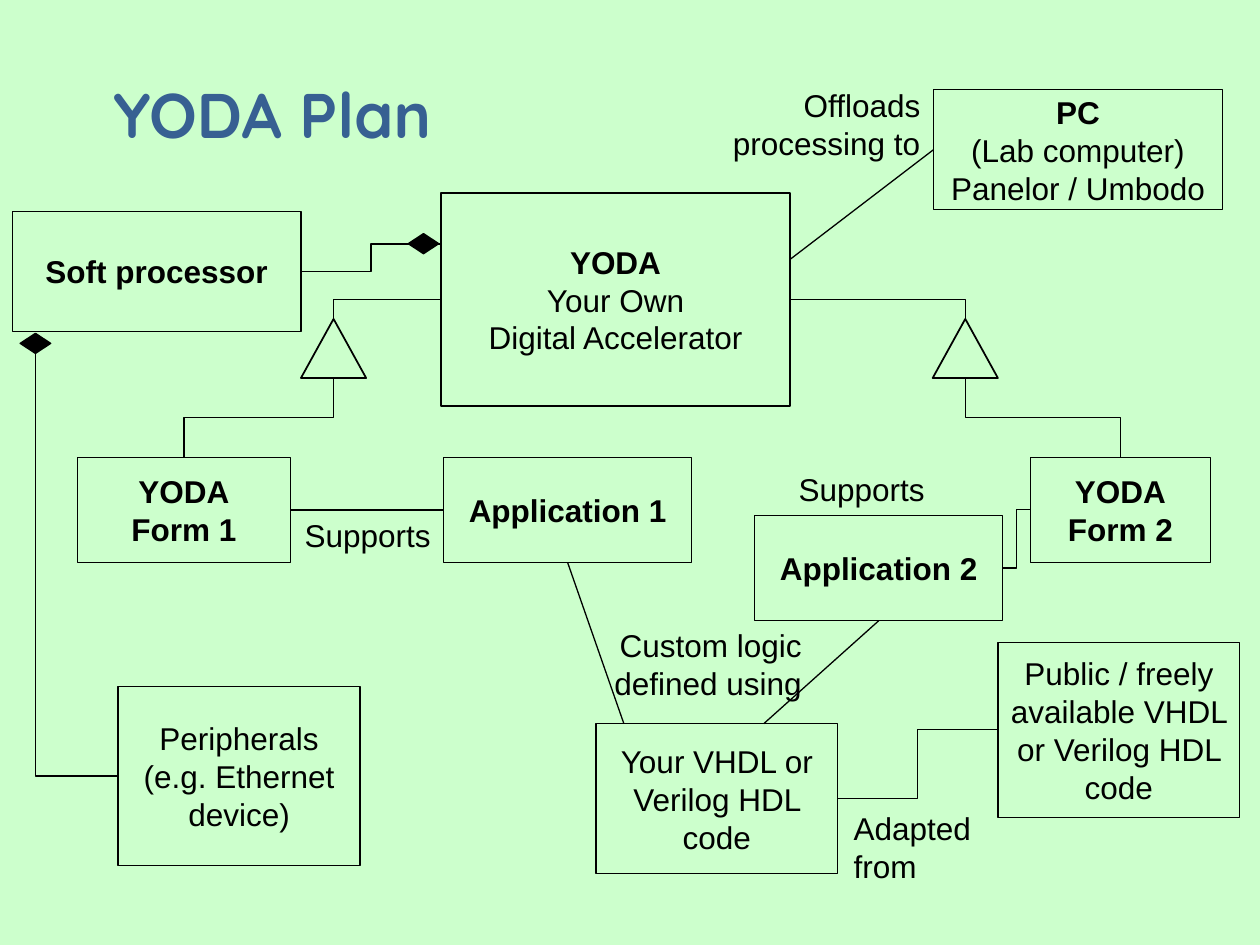
from lxml import etree
from pptx import Presentation
from pptx import util as u
from pptx.dml.color import RGBColor
from pptx.enum import shapes, text
from pptx.oxml.ns import qn

BACKGROUND = RGBColor(0xCC, 0xFF, 0xCC)
TITLE_BLUE = RGBColor(0x37, 0x60, 0x92)
BLACK = RGBColor(0, 0, 0)

SHAPE = shapes.MSO_SHAPE
ALIGN = text.PP_ALIGN
TOP, LEFT, BOTTOM, RIGHT = range(4)
BOX_LINE = 0.75


def points(*lengths):
    return [u.Pt(length) for length in lengths]


def write(shape, lines, align, bold_lines=0):
    """Set the lines as paragraphs, the first bold_lines of them in bold."""
    frame = shape.text_frame
    frame.text = "\n".join(lines)
    for index, paragraph in enumerate(frame.paragraphs):
        paragraph.alignment = align
        font = paragraph.runs[0].font
        font.name, font.size = "Arial", u.Pt(18)
        font.bold = index < bold_lines
        font.color.rgb = BLACK


def add_outline(slide, kind, left, top, width, height, line=BOX_LINE, fill=None):
    shape = slide.shapes.add_shape(kind, *points(left, top, width, height))
    shape.shadow.inherit = False
    if fill is None:
        shape.fill.background()
    else:
        shape.fill.solid()
        shape.fill.fore_color.rgb = fill
    shape.line.color.rgb = BLACK
    shape.line.width = u.Pt(line)
    return shape


def add_box(slide, place, lines, bold_lines=0):
    box = add_outline(slide, SHAPE.RECTANGLE, *place)
    box.text_frame.word_wrap = True
    box.text_frame.vertical_anchor = text.MSO_ANCHOR.MIDDLE
    write(box, lines, ALIGN.CENTER, bold_lines)
    return box


def add_triangle(slide, left):
    return add_outline(slide, SHAPE.ISOSCELES_TRIANGLE, left, 182.25, 37.25, 33.75, line=1)


def add_diamond(slide, left, top):
    return add_outline(slide, SHAPE.FLOWCHART_DECISION, left, top, 17.5, 11.5, fill=BLACK)


def add_label(slide, place, lines, align=ALIGN.LEFT, wrap=False):
    label = slide.shapes.add_textbox(*points(*place))
    label.text_frame.word_wrap = wrap
    label.text_frame.auto_size = text.MSO_AUTO_SIZE.SHAPE_TO_FIT_TEXT
    write(label, lines, align)


def side(shape, number):
    """Middle of a side of a shape, in points."""
    across = {LEFT: 0, RIGHT: 1}.get(number, 0.5)
    down = {TOP: 0, BOTTOM: 1}.get(number, 0.5)
    return (shape.left.pt + across * shape.width.pt,
            shape.top.pt + down * shape.height.pt)


def add_line(slide, start, end, kind=shapes.MSO_CONNECTOR.STRAIGHT):
    connector = slide.shapes.add_connector(kind, *points(*start, *end))
    connector.line.color.rgb = BLACK
    connector.line.width = u.Pt(BOX_LINE)
    etree.SubElement(connector.element.spPr, qn("a:effectLst"))
    return connector


def add_step(slide, start, end):
    """Elbow that runs across, down or up, and across again."""
    return add_line(slide, start, end, shapes.MSO_CONNECTOR.ELBOW)


def add_corner(slide, start, end):
    """Elbow that runs across and then turns once."""
    connector = add_step(slide, start, end)
    connector.element.spPr.find(qn("a:prstGeom")).set("prst", "bentConnector2")


def add_drop(slide, start, end):
    """Elbow that runs down, across and down: a step turned by 90 degrees."""
    middle_x, middle_y = (start[0] + end[0]) / 2, (start[1] + end[1]) / 2
    half_x, half_y = (end[0] - start[0]) / 2, (end[1] - start[1]) / 2
    connector = add_step(slide, (middle_x - half_y, middle_y + half_x),
                         (middle_x + half_y, middle_y - half_x))
    connector.element.spPr.find(qn("a:xfrm")).set("rot", str(90 * 60000))


def add_title(slide, words):
    title = slide.shapes.title
    title.left, title.top, title.width, title.height = points(57.5, 35.25, 606, 55)
    title.text_frame.text = words
    title.text_frame.vertical_anchor = text.MSO_ANCHOR.BOTTOM
    paragraph = title.text_frame.paragraphs[0]
    paragraph.alignment = ALIGN.LEFT
    font = paragraph.runs[0].font
    font.name, font.size, font.bold = "Quicksand", u.Pt(36), True
    font.color.rgb = TITLE_BLUE


def main():
    presentation = Presentation()
    presentation.slide_width, presentation.slide_height = points(720, 540)
    slide = presentation.slides.add_slide(presentation.slide_layouts[5])
    slide.background.fill.solid()
    slide.background.fill.fore_color.rgb = BACKGROUND
    add_title(slide, "YODA Plan")

    # Boxes
    yoda = add_box(slide, (252, 110.25, 199.5, 121.75),
                   ["YODA", "Your Own", "Digital Accelerator"], 1)
    form_1 = add_box(slide, (44.25, 261.25, 121.75, 60.25), ["YODA", "Form 1"], 2)
    form_2 = add_box(slide, (588.75, 261.25, 103, 60.25), ["YODA", "Form 2"], 2)
    application_1 = add_box(slide, (253.5, 261.25, 141.75, 60.25), ["Application 1"], 1)
    application_2 = add_box(slide, (431.25, 294.5, 141.75, 60.25), ["Application 2"], 1)
    processor = add_box(slide, (7, 120.75, 165, 68.5), ["Soft processor"], 1)
    computer = add_box(slide, (533.5, 51.25, 165, 68.5),
                       ["PC", "(Lab computer)", "Panelor / Umbodo"], 1)
    peripherals = add_box(slide, (67.5, 392.5, 138.25, 102),
                          ["Peripherals", "(e.g. Ethernet device)"])
    own_code = add_box(slide, (340.5, 413.5, 138.25, 85.75),
                       ["Your VHDL or Verilog HDL code"])
    public_code = add_box(slide, (570.25, 367, 138.25, 100),
                          ["Public / freely available VHDL or Verilog HDL code"])

    # Inheritance: each form derives from the accelerator
    for left, yoda_side, form in ((172, LEFT, form_1), (533, RIGHT, form_2)):
        triangle = add_triangle(slide, left)
        add_corner(slide, side(yoda, yoda_side), side(triangle, TOP))
        add_drop(slide, side(triangle, BOTTOM), side(form, TOP))

    # Composition
    add_step(slide, side(processor, RIGHT), (252, 139.5))
    add_diamond(slide, 233.25, 133.5)
    processor_diamond = add_diamond(slide, 11.5, 190.5)
    add_corner(slide, side(peripherals, LEFT), side(processor_diamond, TOP))

    # Associations
    supports = add_line(slide, side(form_1, RIGHT), side(application_1, LEFT))
    supports.begin_connect(form_1, RIGHT)
    supports.end_connect(application_1, LEFT)
    add_step(slide, side(application_2, RIGHT), side(form_2, LEFT))
    add_step(slide, side(public_code, LEFT), side(own_code, RIGHT))
    for start, box, number in (((356.5, 413.5), application_1, BOTTOM),
                               ((436.5, 413.5), application_2, BOTTOM),
                               ((451.5, 148.25), computer, LEFT)):
        add_line(slide, start, side(box, number)).end_connect(box, number)

    # Association labels
    add_label(slide, (167, 291.5, 87, 29), ["Supports"])
    add_label(slide, (449.25, 265.25, 87, 29), ["Supports"])
    add_label(slide, (480.75, 458.75, 82, 51), ["Adapted", "from"])
    add_label(slide, (285.25, 354.25, 180, 51), ["Custom logic defined using"],
              ALIGN.RIGHT, wrap=True)
    add_label(slide, (353, 45.75, 180, 51), ["Offloads", "processing to"],
              ALIGN.RIGHT, wrap=True)

    presentation.save("out.pptx")


if __name__ == "__main__":
    main()
